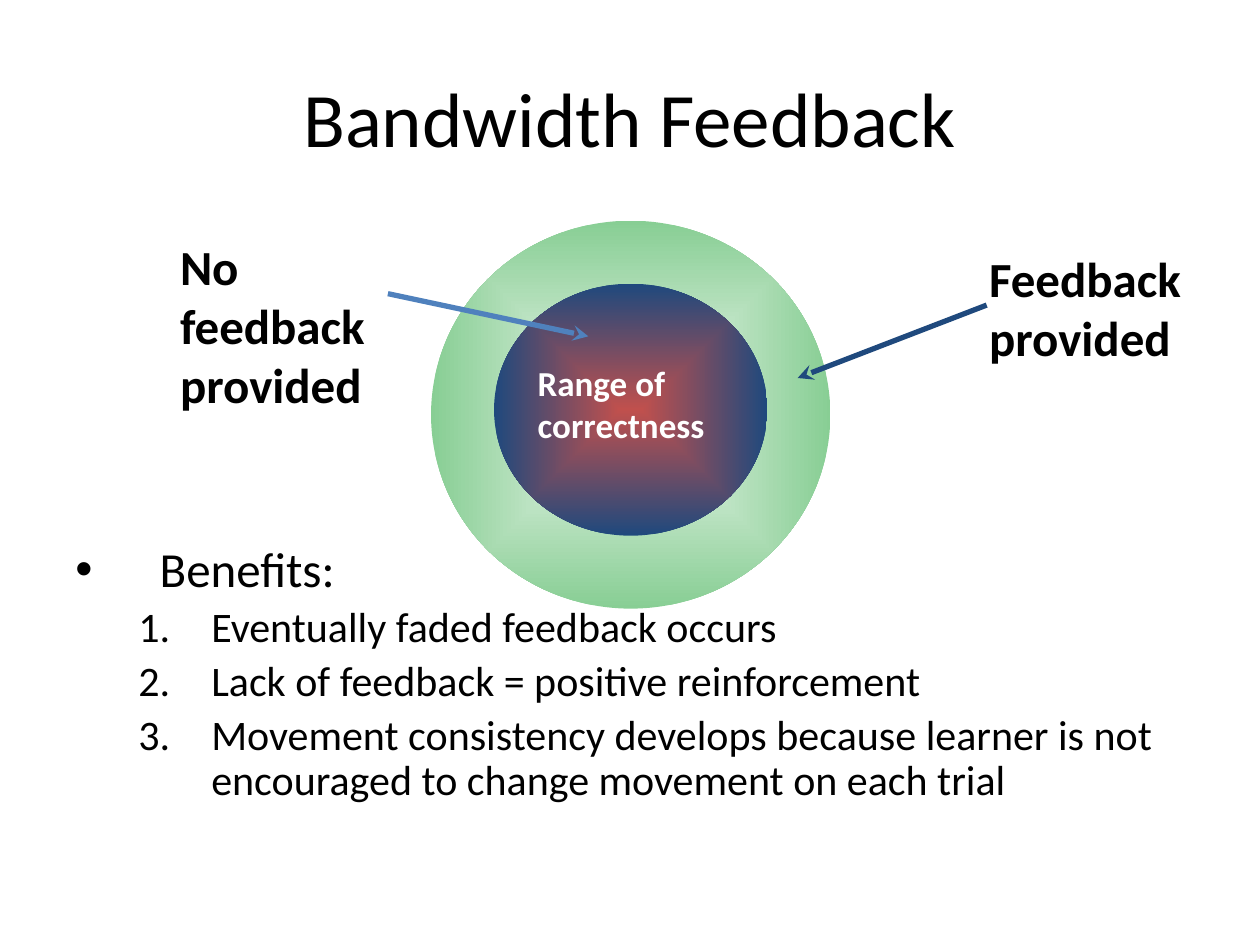
import lxml.etree
import pptx
import pptx.dml.color
import pptx.enum.shapes
import pptx.enum.text
import pptx.oxml.ns
import pptx.util

BLACK = "000000"
WHITE = "FFFFFF"
NAVY = "1F497D"
BLUE = "4F81BD"
BENEFITS = [
    "Eventually faded feedback occurs",
    "Lack of feedback = positive reinforcement",
    "Movement consistency develops because learner is not "
    "encouraged to change movement on each trial",
]


def color(value):
    return pptx.dml.color.RGBColor.from_string(value)


def lengths(values):
    return [pptx.util.Cm(value) for value in values]


def add_element(parent, tag, attributes=None):
    return lxml.etree.SubElement(parent, pptx.oxml.ns.qn(tag), attributes or {})


def apply_format(target, values):
    for name, value in values.items():
        setattr(target, name, value)


def write_run(paragraph, text, size, text_color=BLACK, bold=False):
    run = paragraph.add_run()
    run.text = text
    apply_format(run.font, {"name": "Calibri", "size": pptx.util.Pt(size), "bold": bold})
    run.font.color.rgb = color(text_color)


def add_text_box(slide, box):
    frame = slide.shapes.add_textbox(*lengths(box)).text_frame
    frame.word_wrap = True
    return frame


def add_title(slide, box, text):
    frame = add_text_box(slide, box)
    frame.vertical_anchor = pptx.enum.text.MSO_ANCHOR.MIDDLE
    paragraph = frame.paragraphs[0]
    paragraph.alignment = pptx.enum.text.PP_ALIGN.CENTER
    write_run(paragraph, text, 44)


def add_label(slide, box, text, size=28, text_color=BLACK):
    frame = add_text_box(slide, box)
    write_run(frame.paragraphs[0], text, size, text_color, bold=True)


def add_gradient_ellipse(slide, box, center_color, edge_color):
    shape = slide.shapes.add_shape(pptx.enum.shapes.MSO_SHAPE.OVAL, *lengths(box))
    shape.shadow.inherit = False
    shape.line.fill.background()
    shape.fill.gradient()
    stops = zip(shape.fill.gradient_stops, (0, 1), (center_color, edge_color))
    for stop, position, stop_color in stops:
        stop.position = position
        stop.color.rgb = color(stop_color)
    gradient = shape._element.spPr.find(pptx.oxml.ns.qn("a:gradFill"))
    gradient.remove(gradient.find(pptx.oxml.ns.qn("a:lin")))
    outline = add_element(gradient, "a:path", {"path": "shape"})
    add_element(outline, "a:fillToRect", dict.fromkeys("ltrb", "50000"))


def add_arrow(slide, start, end, line_color):
    connector = slide.shapes.add_connector(
        pptx.enum.shapes.MSO_CONNECTOR.STRAIGHT, *lengths(start + end)
    )
    connector.line.width = pptx.util.Pt(3)
    connector.line.color.rgb = color(line_color)
    add_element(connector.line._get_or_add_ln(), "a:tailEnd", {"type": "stealth"})
    add_element(connector._element.spPr, "a:effectLst")


def write_list_item(paragraph, text, size, left, hanging, space, marker):
    apply_format(paragraph, {"line_spacing": 0.9, "space_before": pptx.util.Pt(space)})
    properties = paragraph._p.get_or_add_pPr()
    properties.set("marL", str(pptx.util.Cm(left)))
    properties.set("indent", str(pptx.util.Cm(-hanging)))
    add_element(properties, "a:buFont", {"typeface": marker["font"]})
    add_element(properties, marker["tag"], marker["attributes"])
    write_run(paragraph, text, size)


def add_benefits(slide, box, heading, items):
    bullet = {"font": "Arial", "tag": "a:buChar", "attributes": {"char": "•"}}
    number = {"font": "Calibri", "tag": "a:buAutoNum", "attributes": {"type": "arabicPeriod"}}
    frame = add_text_box(slide, box)
    write_list_item(frame.paragraphs[0], heading, 28, 1.7, 1.7, 0, bullet)
    for item in items:
        paragraph = frame.add_paragraph()
        paragraph.level = 1
        write_list_item(paragraph, item, 24, 2.74, 1.47, 4.8, number)


def main():
    presentation = pptx.Presentation()
    size = {"slide_width": pptx.util.Cm(25.4), "slide_height": pptx.util.Cm(19.05)}
    apply_format(presentation, size)
    slide = presentation.slides.add_slide(presentation.slide_layouts[6])
    add_gradient_ellipse(slide, (8.69, 4.45, 8.05, 7.82), "EEF7EF", "88CE94")
    add_title(slide, (1.27, 0.76, 22.86, 3.18), "Bandwidth Feedback")
    add_benefits(slide, (1.27, 10.87, 22.86, 6.15), "Benefits:", BENEFITS)
    add_gradient_ellipse(slide, (9.96, 5.72, 5.51, 5.08), "C0504D", NAVY)
    add_label(slide, (10.59, 7.16, 4.24, 1.96), "Range of correctness", 20, WHITE)
    add_arrow(slide, (19.89, 6.15), (16.08, 7.62), NAVY)
    add_arrow(slide, (7.82, 5.92), (11.86, 6.78), BLUE)
    add_label(slide, (19.69, 4.88, 4.45, 2.29), "Feedback provided")
    add_label(slide, (3.38, 4.65, 4.45, 3.3), "No feedback provided")
    presentation.save("out.pptx")


if __name__ == "__main__":
    main()
